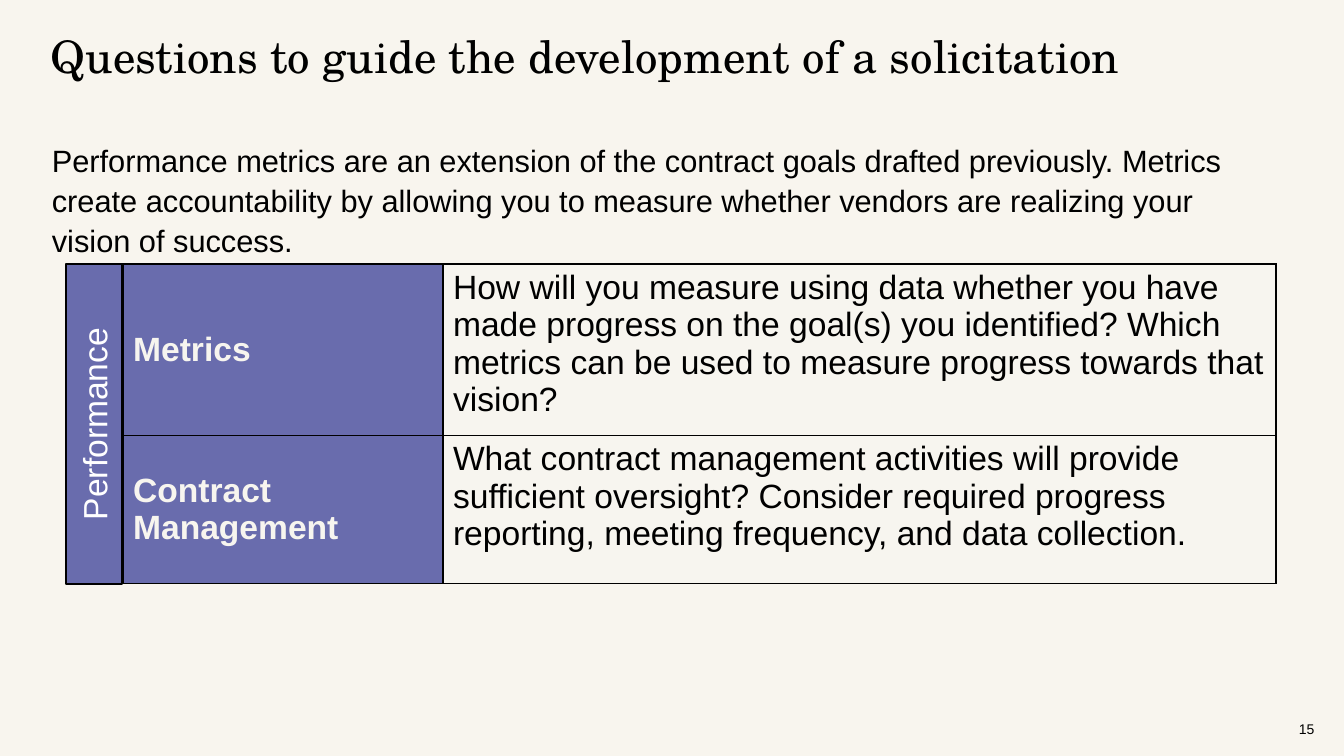
import pptx
import pptx.util
import pptx.dml.color
import pptx.enum.shapes
import pptx.enum.text
import pptx.oxml
import pptx.oxml.ns

EMU_PER_PX = 914400 / 100.8
ANCHOR = pptx.enum.text.MSO_ANCHOR
ALIGN = pptx.enum.text.PP_ALIGN

QUESTIONS = [
    ("Metrics",
     "How will you measure using data whether you have made progress on the goal(s) "
     "you identified? Which metrics can be used to measure progress towards that vision?"),
    ("Contract Management",
     "What contract management activities will provide sufficient oversight? Consider "
     "required progress reporting, meeting frequency, and data collection."),
]


def px(*lengths):
    return [pptx.util.Emu(round(length * EMU_PER_PX)) for length in lengths]


def color(hex_string):
    return pptx.dml.color.RGBColor.from_string(hex_string)


class SlideBuilder:
    BACKGROUND = "F8F5EE"
    PURPLE = "696CAD"
    CREAM = "F7F5EF"
    BLACK = "000000"
    WHITE = "FFFFFF"
    HEADING_FONT = "TeX Gyre Schola"
    BODY_FONT = "Arial"

    def __init__(self, presentation):
        self.slide = presentation.slides.add_slide(presentation.slide_layouts[6])
        fill = self.slide.background.fill
        fill.solid()
        fill.fore_color.rgb = color(self.BACKGROUND)

    def add_words(self, frame, text, size, hex_string=BLACK, font=BODY_FONT, bold=False):
        frame.word_wrap = True
        paragraph = frame.paragraphs[0]
        run = paragraph.add_run()
        run.text = text
        run.font.size = pptx.util.Pt(size)
        run.font.name = font
        run.font.bold = bold
        run.font.color.rgb = color(hex_string)
        return paragraph

    def text(self, box, text, size, font=BODY_FONT, anchor=ANCHOR.TOP, line_spacing=None):
        frame = self.slide.shapes.add_textbox(*px(*box)).text_frame
        frame.vertical_anchor = anchor
        if font == self.HEADING_FONT:
            frame.margin_top = 0
        paragraph = self.add_words(frame, text, size, font=font)
        paragraph.line_spacing = line_spacing

    def side_label(self, box, text, size):
        """Add a bar turned to read upwards; box is its place before turning."""
        shape = self.slide.shapes.add_shape(
            pptx.enum.shapes.MSO_SHAPE.RECTANGLE, *px(*box))
        shape.rotation = 270
        shape.shadow.inherit = False
        shape.fill.solid()
        shape.fill.fore_color.rgb = color(self.PURPLE)
        shape.line.color.rgb = color(self.BLACK)
        shape.line.width = pptx.util.Pt(1.5)
        shape.text_frame.vertical_anchor = ANCHOR.MIDDLE
        paragraph = self.add_words(shape.text_frame, text, size, self.WHITE)
        paragraph.alignment = ALIGN.CENTER

    def border(self, cell):
        properties = cell._tc.get_or_add_tcPr()
        for side in ("lnL", "lnR", "lnT", "lnB"):
            properties.append(pptx.oxml.parse_xml(
                f'<a:{side} {pptx.oxml.ns.nsdecls("a")} w="12700"><a:solidFill>'
                f'<a:srgbClr val="{self.BLACK}"/></a:solidFill></a:{side}>'))

    def table(self, left, top, widths, row_height, rows, size):
        """Add a table of bold headings on purple, each beside its question."""
        table = self.slide.shapes.add_table(
            len(rows), len(widths),
            *px(left, top, sum(widths), row_height * len(rows))).table
        table.first_row = table.horz_banding = False
        for column, width in zip(table.columns, px(*widths)):
            column.width = width
        for row_index, row in enumerate(rows):
            for column_index, text in enumerate(row):
                heading = column_index == 0
                cell = table.cell(row_index, column_index)
                self.border(cell)
                cell.fill.solid()
                cell.fill.fore_color.rgb = color(self.PURPLE if heading else self.CREAM)
                cell.vertical_anchor = ANCHOR.MIDDLE if heading else ANCHOR.TOP
                self.add_words(cell.text_frame, text, size,
                               self.CREAM if heading else self.BLACK, bold=heading)


def main():
    presentation = pptx.Presentation()
    presentation.slide_width, presentation.slide_height = px(1344, 756)
    builder = SlideBuilder(presentation)
    builder.text((1289, 709, 55, 40), "15", 10, anchor=ANCHOR.MIDDLE)
    builder.text(
        (42, 134, 1210, 512),
        "Performance metrics are an extension of the contract goals drafted previously. "
        "Metrics create accountability by allowing you to measure whether vendors are "
        "realizing your vision of success.", 22, line_spacing=1.08)
    builder.text((41, 29, 1210, 59), "Questions to guide the development of a solicitation",
                 32, font=builder.HEADING_FONT)
    builder.table(123, 264, (320, 833), 148, QUESTIONS, 24)
    builder.side_label((-66, 396, 320, 56), "Performance", 24)
    presentation.save("out.pptx")


if __name__ == "__main__":
    main()
